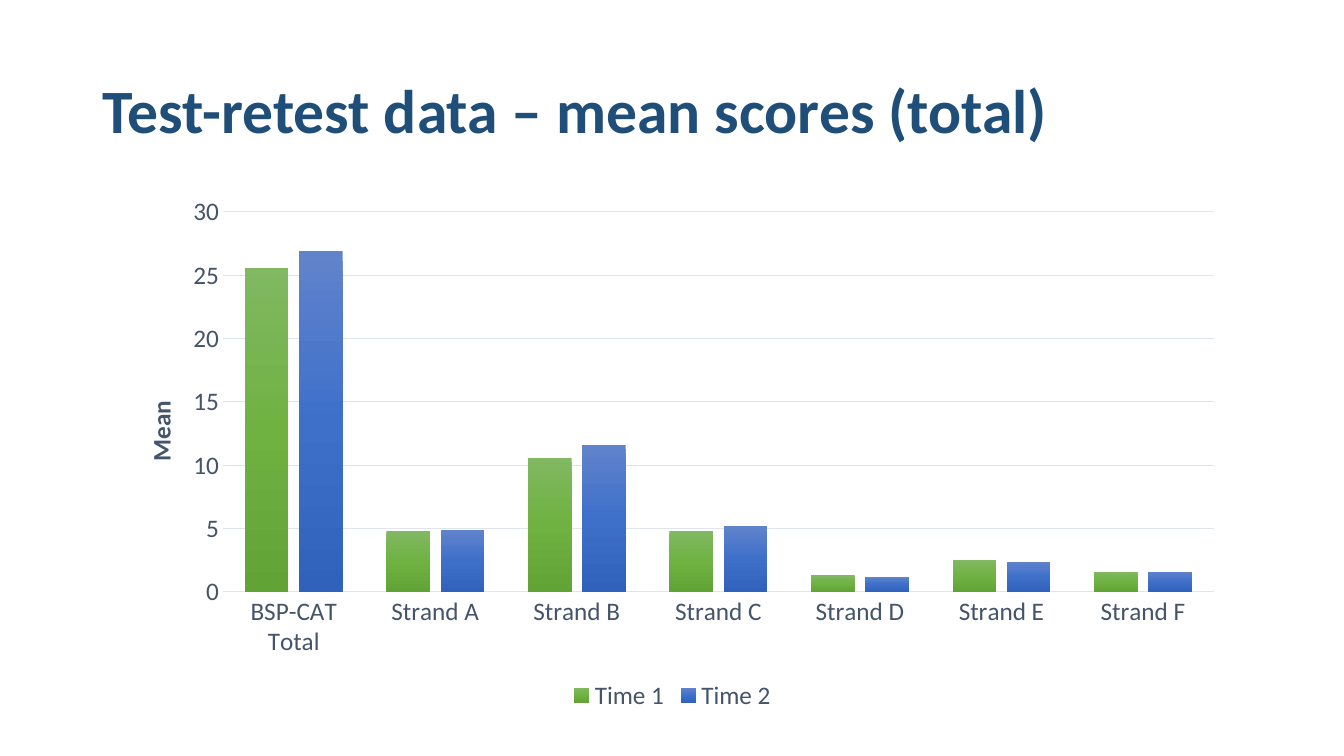
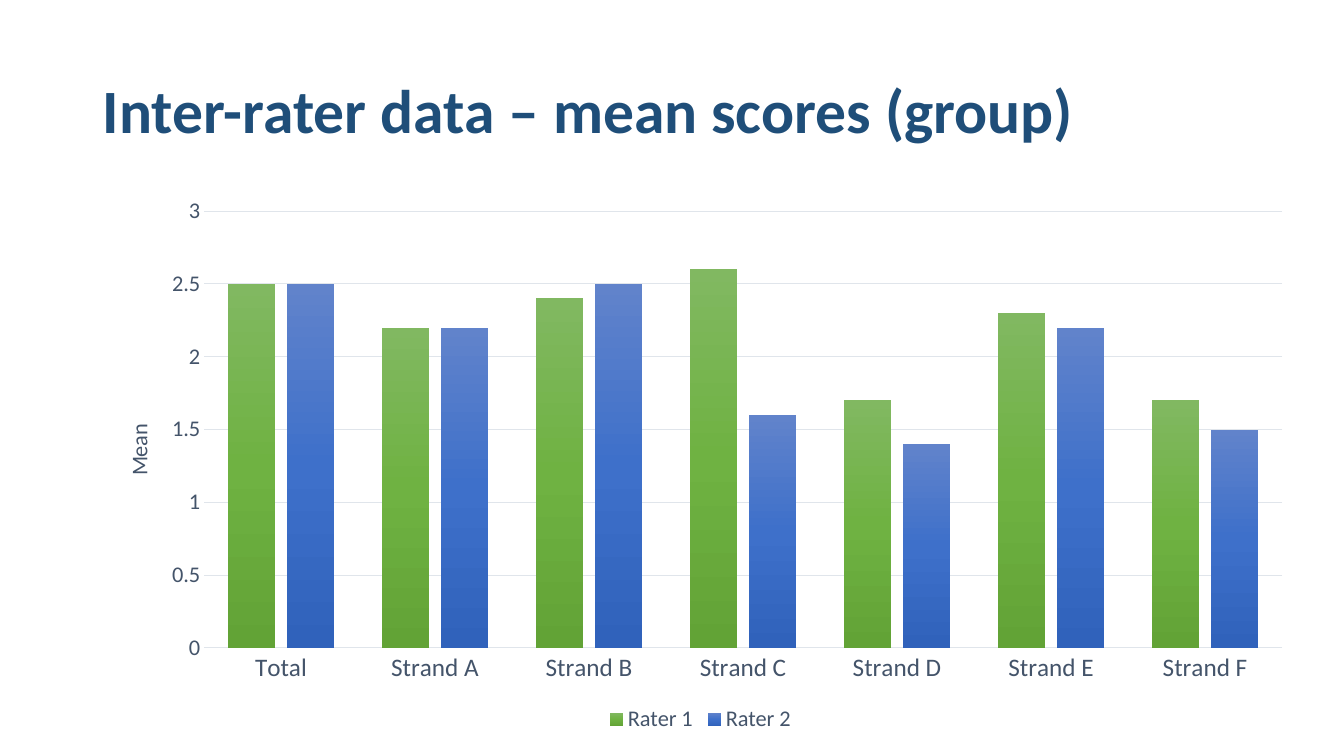
from copy import deepcopy

from lxml.etree import SubElement
from pptx import Presentation
from pptx.chart.data import CategoryChartData
from pptx.dml.color import RGBColor
from pptx.enum.chart import XL_CHART_TYPE, XL_LEGEND_POSITION, XL_TICK_MARK
from pptx.enum.text import MSO_ANCHOR
from pptx.oxml import parse_xml
from pptx.oxml.ns import nsdecls, qn
from pptx.util import Cm, Pt

NAVY = RGBColor(0x1F, 0x4E, 0x79)
SLATE = RGBColor(0x44, 0x54, 0x6A)
GRID = RGBColor(0xE0, 0xE5, 0xEB)
GREENS = (RGBColor(0x81, 0xB8, 0x61), RGBColor(0x6F, 0xB2, 0x42), RGBColor(0x62, 0xA3, 0x36))
BLUES = (RGBColor(0x61, 0x83, 0xCB), RGBColor(0x3E, 0x70, 0xCA), RGBColor(0x30, 0x62, 0xBB))

FONT = "Calibri"
STRANDS = [f"Strand {letter}" for letter in "ABCDEF"]

# Boxes are left, top, width, height in cm, measured on the slide.
HEADING_BOX = (2.34, 1.02, 29.21, 3.68)
SCORES = [
    {
        "heading": "Test-retest data – mean scores (total)",
        "categories": ["BSP-CAT Total", *STRANDS],
        "means": {
            "Time 1": (25.6, 4.8, 10.6, 4.8, 1.3, 2.5, 1.6),
            "Time 2": (26.9, 4.9, 11.6, 5.2, 1.2, 2.4, 1.6),
        },
        "scale": {"minimum_scale": 0, "maximum_scale": 30, "major_unit": 5},
        "chart_box": (2.72, 4.7, 28.45, 13.34),
        "plot_box": (5.62, 5.34, 24.97, 9.58),
        "axis_title_at": (3.5, 9.98),
        "axis_title_bold": True,
        "text_size": 18,
    },
    {
        "heading": "Inter-rater data – mean scores (group)",
        "categories": ["Total", *STRANDS],
        "means": {
            "Rater 1": (2.5, 2.2, 2.4, 2.6, 1.7, 2.3, 1.7),
            "Rater 2": (2.5, 2.2, 2.5, 1.6, 1.4, 2.2, 1.5),
        },
        "scale": {"minimum_scale": 0, "maximum_scale": 3, "major_unit": 0.5},
        "chart_box": (2.34, 4.7, 30.61, 13.89),
        "plot_box": (5.14, 5.32, 27.17, 11.01),
        "axis_title_at": (3.02, 10.58),
        "axis_title_bold": False,
        "text_size": 16,
    },
]


def apply_format(target, values):
    for attribute, value in values.items():
        setattr(target, attribute, value)


def style_font(font, size, color=SLATE, bold=False):
    apply_format(font, {"name": FONT, "size": Pt(size), "bold": bold})
    font.color.rgb = color


def style_line(line):
    line.width = Pt(0.75)
    line.color.rgb = GRID


def add_heading(slide, text):
    frame = slide.shapes.add_textbox(*map(Cm, HEADING_BOX)).text_frame
    apply_format(frame, {"word_wrap": True, "vertical_anchor": MSO_ANCHOR.MIDDLE})
    paragraph = frame.paragraphs[0]
    apply_format(paragraph, {"text": text, "line_spacing": 0.9})
    style_font(paragraph.runs[0].font, 44, NAVY, bold=True)


def place_in_chart(parent, chart_box, box, inner=False):
    """Fix a chart part at box, given in cm on the slide."""
    layout = parent.find(qn("c:layout"))
    if layout is None:
        layout = parse_xml(f"<c:layout {nsdecls('c')}/>")
        parent.insert(0, layout)
    manual = SubElement(layout, qn("c:manualLayout"))
    left, top, width, height = chart_box
    offsets = (box[0] - left, box[1] - top, *box[2:])
    settings = {"layoutTarget": "inner"} if inner else {}
    settings |= {"xMode": "edge", "yMode": "edge"}
    for key, offset, extent in zip("xywh", offsets, (width, height) * 2):
        settings[key] = f"{offset / extent:.4f}"
    for tag, value in settings.items():
        SubElement(manual, qn(f"c:{tag}")).set("val", value)


def fill_bars(series, colors):
    """Shade the bars of a series downwards through three colours."""
    fill = series.format.fill
    fill.gradient()
    fill.gradient_angle = 270
    stop_list = next(series.format.fill._xPr.iter(qn("a:gsLst")))
    stop_list.insert(1, deepcopy(stop_list[0]))
    for index, (stop, color) in enumerate(zip(fill.gradient_stops, colors)):
        stop.color.rgb = color
        stop.position = index / 2


def style_axes(chart, score):
    size = score["text_size"]
    for axis, label_size in ((chart.category_axis, 18), (chart.value_axis, size)):
        apply_format(axis, {"major_tick_mark": XL_TICK_MARK.NONE,
                            "minor_tick_mark": XL_TICK_MARK.NONE})
        style_font(axis.tick_labels.font, label_size)
    style_line(chart.category_axis.format.line)

    mean_axis = chart.value_axis
    apply_format(mean_axis, score["scale"])
    mean_axis.format.line.fill.background()
    style_line(mean_axis.major_gridlines.format.line)

    axis_title = mean_axis.axis_title
    frame = axis_title.text_frame
    frame.text = "Mean"
    frame._txBody.bodyPr.set("rot", "-5400000")
    style_font(frame.paragraphs[0].runs[0].font, size, bold=score["axis_title_bold"])
    place_in_chart(axis_title._element, score["chart_box"], score["axis_title_at"])


def add_mean_chart(slide, score):
    data = CategoryChartData()
    data.categories = score["categories"]
    for name, means in score["means"].items():
        data.add_series(name, means)
    chart = slide.shapes.add_chart(
        XL_CHART_TYPE.COLUMN_CLUSTERED, *map(Cm, score["chart_box"]), data
    ).chart
    apply_format(chart, {"has_title": False, "has_legend": True})
    style_font(chart.font, 10)

    plot = chart.plots[0]
    apply_format(plot, {"gap_width": 100, "overlap": -24, "vary_by_categories": False})
    for series, colors in zip(plot.series, (GREENS, BLUES)):
        fill_bars(series, colors)
    style_axes(chart, score)
    place_in_chart(chart._chartSpace.chart.plotArea, score["chart_box"],
                   score["plot_box"], inner=True)

    apply_format(chart.legend, {"position": XL_LEGEND_POSITION.BOTTOM,
                                "include_in_layout": False})
    style_font(chart.legend.font, score["text_size"])


def main():
    presentation = Presentation()
    apply_format(presentation, {"slide_width": Cm(33.87), "slide_height": Cm(19.05)})
    blank = presentation.slide_layouts[6]
    for score in SCORES:
        slide = presentation.slides.add_slide(blank)
        add_heading(slide, score["heading"])
        add_mean_chart(slide, score)
    presentation.save("out.pptx")


if __name__ == "__main__":
    main()
